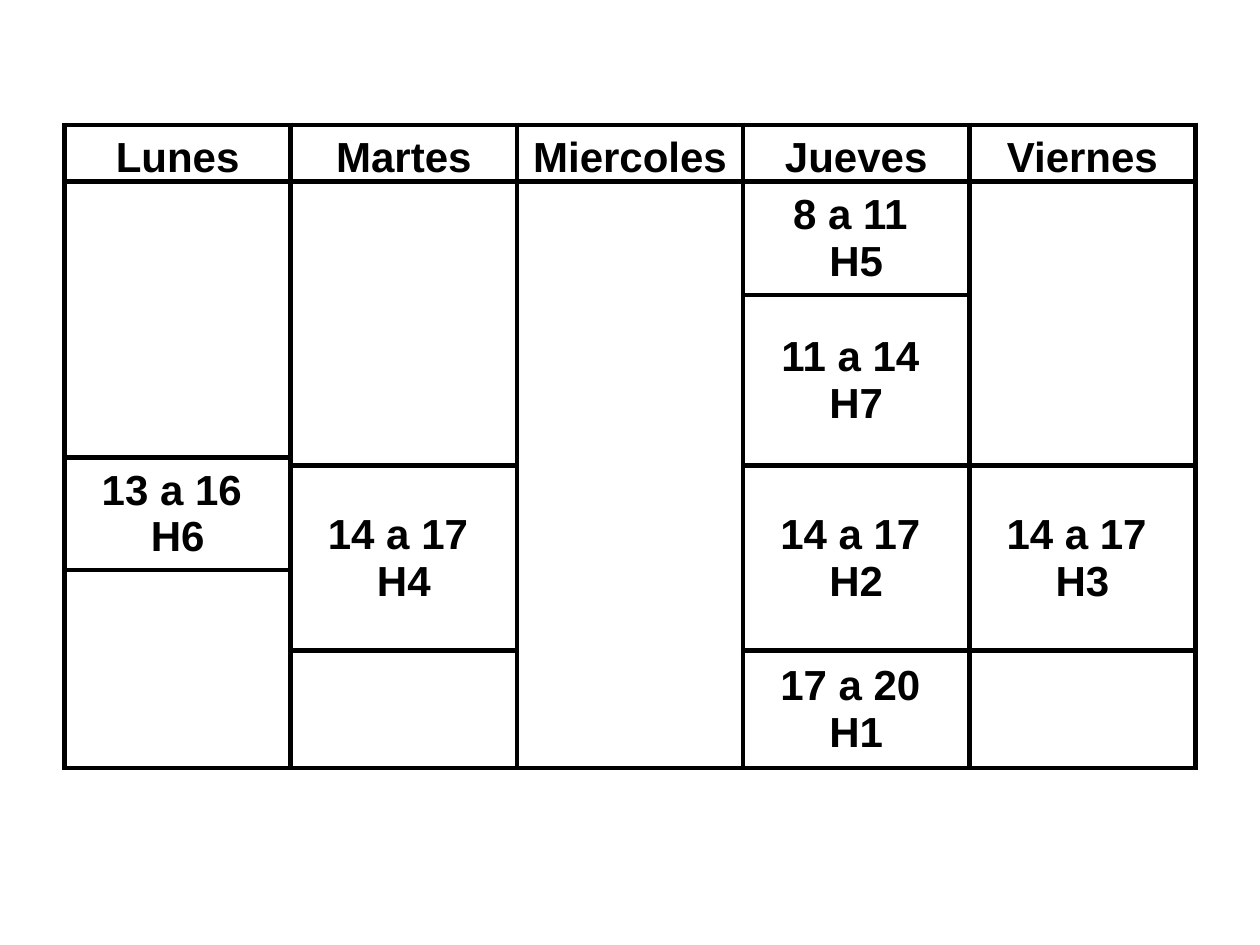
from lxml.etree import SubElement
from pptx import Presentation
from pptx.dml.color import RGBColor
from pptx.enum.text import MSO_ANCHOR, PP_ALIGN
from pptx.oxml.ns import qn
from pptx.util import Cm, Pt

BLACK = RGBColor(0, 0, 0)
BORDER_WIDTH = Pt(3)
DAYS = ["Lunes", "Martes", "Miercoles", "Jueves", "Viernes"]
ROW_HEIGHTS = [1.14, 2.29, 3.28, 0.15, 2.11, 1.63, 2.36]
LESSONS = [
    (3, 0, 2, ["13 a 16 ", "H6"]),
    (4, 1, 2, ["14 a 17 ", "H4"]),
    (1, 3, 1, ["8 a 11 ", "H5"]),
    (2, 3, 2, ["11 a 14 ", "H7"]),
    (4, 3, 2, ["14 a 17 ", "H2"]),
    (6, 3, 1, ["17 a 20 ", "H1"]),
    (4, 4, 2, ["14 a 17 ", "H3"]),
]
FREE_SLOTS = [(1, 0, 2), (5, 0, 2), (1, 1, 3), (1, 2, 6), (1, 4, 3)]
CELL_FORMAT = {"margin_left": Cm(0.08), "margin_right": Cm(0.08),
               "margin_top": 0, "margin_bottom": 0}
FONT_FORMAT = {"name": "Arial", "size": Pt(24), "bold": True}


def apply_format(target, values):
    for attribute, value in values.items():
        setattr(target, attribute, value)


def style_cell(cell):
    apply_format(cell, CELL_FORMAT)
    properties = cell._tc.get_or_add_tcPr()
    for side in ("a:lnL", "a:lnR", "a:lnT", "a:lnB"):
        border = SubElement(properties, qn(side), w=str(BORDER_WIDTH))
        paint = SubElement(border, qn("a:solidFill"))
        SubElement(paint, qn("a:srgbClr"), val=str(BLACK))
    cell.fill.background()


def write_cell(cell, lines, anchor):
    cell.vertical_anchor = anchor
    cell.text = "\n".join(lines)
    for paragraph in cell.text_frame.paragraphs:
        paragraph.alignment = PP_ALIGN.CENTER
        font = paragraph.runs[0].font
        apply_format(font, FONT_FORMAT)
        font.color.rgb = BLACK


def merge_down(timetable, row, column, span):
    if span > 1:
        timetable.cell(row, column).merge(timetable.cell(row + span - 1, column))


def add_timetable(slide, left, top, width):
    timetable = slide.shapes.add_table(
        len(ROW_HEIGHTS), len(DAYS), Cm(left), Cm(top),
        Cm(width), Cm(sum(ROW_HEIGHTS))).table
    apply_format(timetable, {"first_row": False, "horz_banding": False})
    for day_column in timetable.columns:
        day_column.width = Cm(width / len(DAYS))
    for hour_row, height in zip(timetable.rows, ROW_HEIGHTS):
        hour_row.height = Cm(height)
    for cell in timetable.iter_cells():
        style_cell(cell)
    for column, day in enumerate(DAYS):
        write_cell(timetable.cell(0, column), [day], MSO_ANCHOR.BOTTOM)
    for row, column, span in FREE_SLOTS:
        merge_down(timetable, row, column, span)
    for row, column, span, lines in LESSONS:
        merge_down(timetable, row, column, span)
        write_cell(timetable.cell(row, column), lines, MSO_ANCHOR.MIDDLE)


def main():
    presentation = Presentation()
    apply_format(presentation, {"slide_width": Cm(25.4), "slide_height": Cm(19.05)})
    slide = presentation.slides.add_slide(presentation.slide_layouts[6])
    add_timetable(slide, 1.3, 2.52, 22.8)
    presentation.save("out.pptx")


if __name__ == "__main__":
    main()
